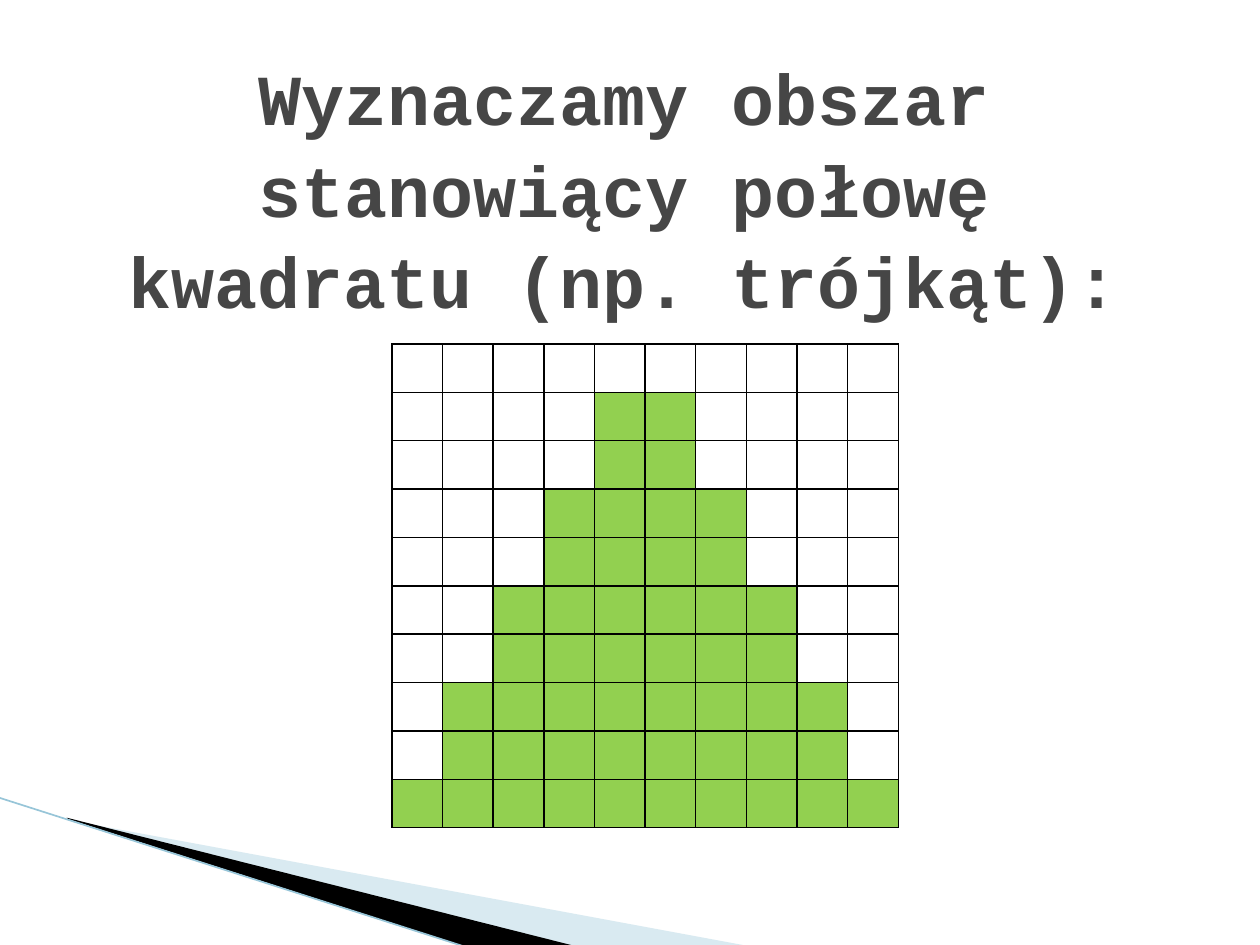
"""Build a slide with a stepped triangle shaded on a square grid."""
from dataclasses import dataclass

from lxml.etree import SubElement
from pptx import Presentation
from pptx.dml.color import RGBColor as Rgb
from pptx.enum.shapes import MSO_CONNECTOR as Connector
from pptx.enum.text import MSO_ANCHOR as Anchor, MSO_AUTO_SIZE as AutoSize, PP_ALIGN as Align
from pptx.oxml.ns import qn
from pptx.util import Inches, Pt


@dataclass(frozen=True)
class Theme:
    font: str = "Courier New"
    title_size: float = 41
    title_spacing: float = 1.06
    title: str = "464646"
    shade: str = "92D050"
    border: str = "000000"
    border_width: float = 1
    wedge: str = "A0CBDC"
    wedge_dark: str = "000000"
    edge: str = "97C5D8"
    edge_width: float = 0.95


THEME = Theme()
GRID_SIZE = 10


def add_wedge(page, points, color, opacity=100):
    start, *rest = [(Inches(x), Inches(y)) for x, y in points]
    builder = page.shapes.build_freeform(*start)
    builder.add_line_segments(rest, close=True)
    wedge = builder.convert_to_shape()
    wedge.shadow.inherit = False
    wedge.line.fill.background()
    wedge.fill.solid()
    wedge.fill.fore_color.rgb = Rgb.from_string(color)
    if opacity < 100:
        color_node = next(wedge.fill._xPr.iter(qn("a:srgbClr")))
        SubElement(color_node, qn("a:alpha"), val=str(opacity * 1000))


def add_edge(page, start, end):
    ends = [Inches(value) for value in (*start, *end)]
    edge = page.shapes.add_connector(Connector.STRAIGHT, *ends)
    edge.line.color.rgb = Rgb.from_string(THEME.edge)
    edge.line.width = Pt(THEME.edge_width)
    SubElement(edge._element.spPr, qn("a:effectLst"))


def add_title(page, text):
    box = page.shapes.title
    box.left, box.top, box.width, box.height = map(Inches, (0.5, 0.3, 8.91, 2.35))
    frame = box.text_frame
    frame.word_wrap = True
    frame.auto_size = AutoSize.NONE
    frame.vertical_anchor = Anchor.MIDDLE
    para = frame.paragraphs[0]
    para.alignment = Align.CENTER
    para.line_spacing = THEME.title_spacing
    span = para.add_run()
    span.text = text
    span.font.name = THEME.font
    span.font.size = Pt(THEME.title_size)
    span.font.bold = True
    span.font.color.rgb = Rgb.from_string(THEME.title)


def set_borders(cell):
    properties = cell._tc.get_or_add_tcPr()
    for position, side in enumerate(("lnL", "lnR", "lnT", "lnB")):
        line = SubElement(properties, qn(f"a:{side}"), w=str(Pt(THEME.border_width)))
        fill = SubElement(line, qn("a:solidFill"))
        SubElement(fill, qn("a:srgbClr"), val=THEME.border)
        properties.insert(position, line)


def style_cell(cell, shaded):
    cell.margin_top = cell.margin_bottom = 0
    if shaded:
        cell.fill.solid()
        cell.fill.fore_color.rgb = Rgb.from_string(THEME.shade)
    else:
        cell.fill.background()
    set_borders(cell)


def add_triangle_grid(page):
    area = map(Inches, (3.11, 2.73, 4.02, 3.84))
    table = page.shapes.add_table(GRID_SIZE, GRID_SIZE, *area).table
    table.first_row = table.horz_banding = False
    middle = (GRID_SIZE - 1) / 2
    for row in range(GRID_SIZE):
        half_width = (row + 1) // 2
        for column in range(GRID_SIZE):
            style_cell(table.cell(row, column), abs(column - middle) < half_width)


def main():
    deck = Presentation()
    deck.slide_width, deck.slide_height = Inches(10), Inches(7.5)
    page = deck.slides.add_slide(deck.slide_layouts[5])
    add_wedge(page, [(0.55, 6.51), (5.95, 7.51), (4.56, 7.51), (0.55, 6.5)], THEME.wedge, 40)
    add_wedge(page, [(0.53, 6.49), (4.57, 7.51), (3.72, 7.52), (0.54, 6.5)], THEME.wedge_dark)
    add_edge(page, (-0.01, 6.33), (3.71, 7.52))
    add_triangle_grid(page)
    add_title(page, "Wyznaczamy obszar stanowiący połowę kwadratu (np. trójkąt):")
    deck.save("out.pptx")


if __name__ == "__main__":
    main()
